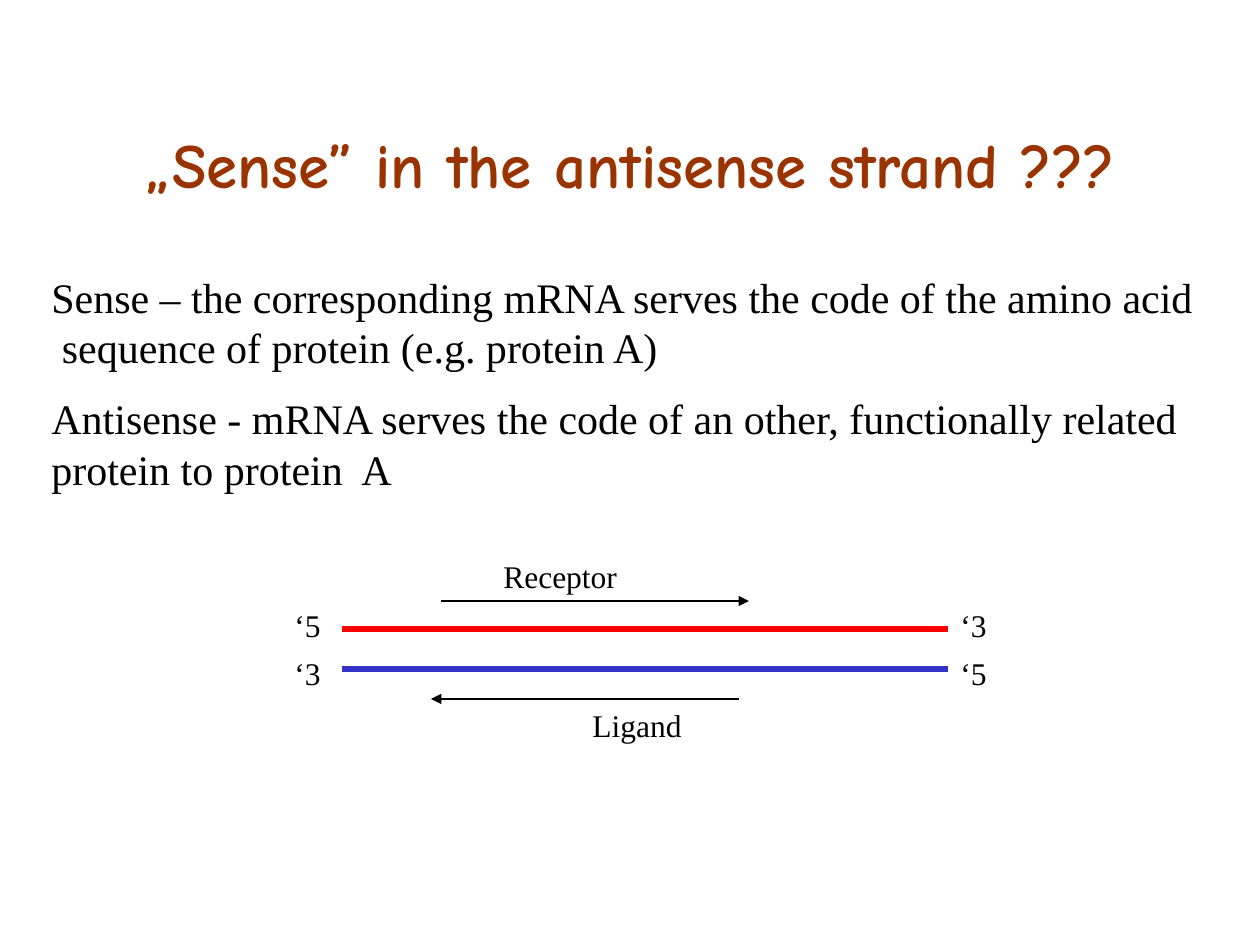
from lxml import etree
from pptx import Presentation
from pptx.dml.color import RGBColor
from pptx.enum.shapes import MSO_CONNECTOR
from pptx.enum.text import MSO_ANCHOR, PP_ALIGN
from pptx.oxml.ns import qn
from pptx.util import Pt

STRAIGHT = MSO_CONNECTOR.STRAIGHT
MIDDLE = MSO_ANCHOR.MIDDLE
LEFT, CENTER = PP_ALIGN.LEFT, PP_ALIGN.CENTER

PX = 914400 // 126
BROWN = RGBColor(0x99, 0x33, 0x00)
BLACK = RGBColor(0, 0, 0)
RED = RGBColor(0xFF, 0, 0)
BLUE = RGBColor(0x33, 0x33, 0xCC)
SERIF = "Times New Roman"

# Content
TITLE = "„Sense” in the antisense strand ???"
BODY = [
    "Sense – the corresponding mRNA serves the code of the amino acid\v sequence of protein (e.g. protein A)",
    "Antisense - mRNA serves the code of an other, functionally related protein to protein  A",
]
# Strands: y, colour, left end, right end
STRANDS = [(629, RED, "‘5", "‘3"), (669, BLUE, "‘3", "‘5")]
# Arrows: start x, end x, y, label, label x, label y
ARROWS = [
    (441, 749, 601, "Receptor", 491, 551),
    (739, 431, 699, "Ligand", 580, 700),
]
START, END = 342, 948
TAG_X, TAG_W, TAG_H = 282, 120, 50


def write(shape, lines, size=18, font=SERIF, color=BLACK, bold=False, align=LEFT):
    frame = shape.text_frame
    frame.word_wrap = True
    for i, line in enumerate(lines):
        para = frame.paragraphs[0] if i == 0 else frame.add_paragraph()
        para.text = line
        para.alignment = align
        para.space_before = Pt(size / 2 if i else 0)
        for run in para.runs:
            run.font.size = Pt(size)
            run.font.name = font
            run.font.bold = bold
            run.font.color.rgb = color


def place(shape, x, y, w, h):
    shape.left, shape.top, shape.width, shape.height = (v * PX for v in (x, y, w, h))


def box(x, y, w, h):
    return slide.shapes.add_textbox(x * PX, y * PX, w * PX, h * PX)


def rule(x1, x2, y, color, width, arrow=False):
    line = slide.shapes.add_connector(STRAIGHT, x1 * PX, y * PX, x2 * PX, y * PX)
    line.line.color.rgb = color
    line.line.width = Pt(width)
    if arrow:
        etree.SubElement(line.line._get_or_add_ln(), qn("a:tailEnd"), type="triangle")
    etree.SubElement(line._element.spPr, qn("a:effectLst"))


deck = Presentation()
deck.slide_width, deck.slide_height = 1260 * PX, 945 * PX
slide = deck.slides.add_slide(deck.slide_layouts[5])

# Title and definitions
title = slide.shapes.title
place(title, 94, 84, 1071, 158)
title.text_frame.vertical_anchor = MIDDLE
write(title, [TITLE], size=36, font="Comic Neue", color=BROWN, bold=True, align=CENTER)
write(box(39, 265, 1186, 242), BODY, size=24)

# Strands with their end tags
for y, color, left, right in STRANDS:
    rule(START, END, y, color, 3)
    top = 600 + (y - STRANDS[0][0]) * 6 // 5
    for x, tag in ((TAG_X, left), (END, right)):
        write(box(x, top, TAG_W, TAG_H), [tag])

# Reading directions
for x1, x2, y, label, x, top in ARROWS:
    rule(x1, x2, y, BLACK, 0.75, arrow=True)
    write(box(x, top, 258, TAG_H), [label])

deck.save("out.pptx")
